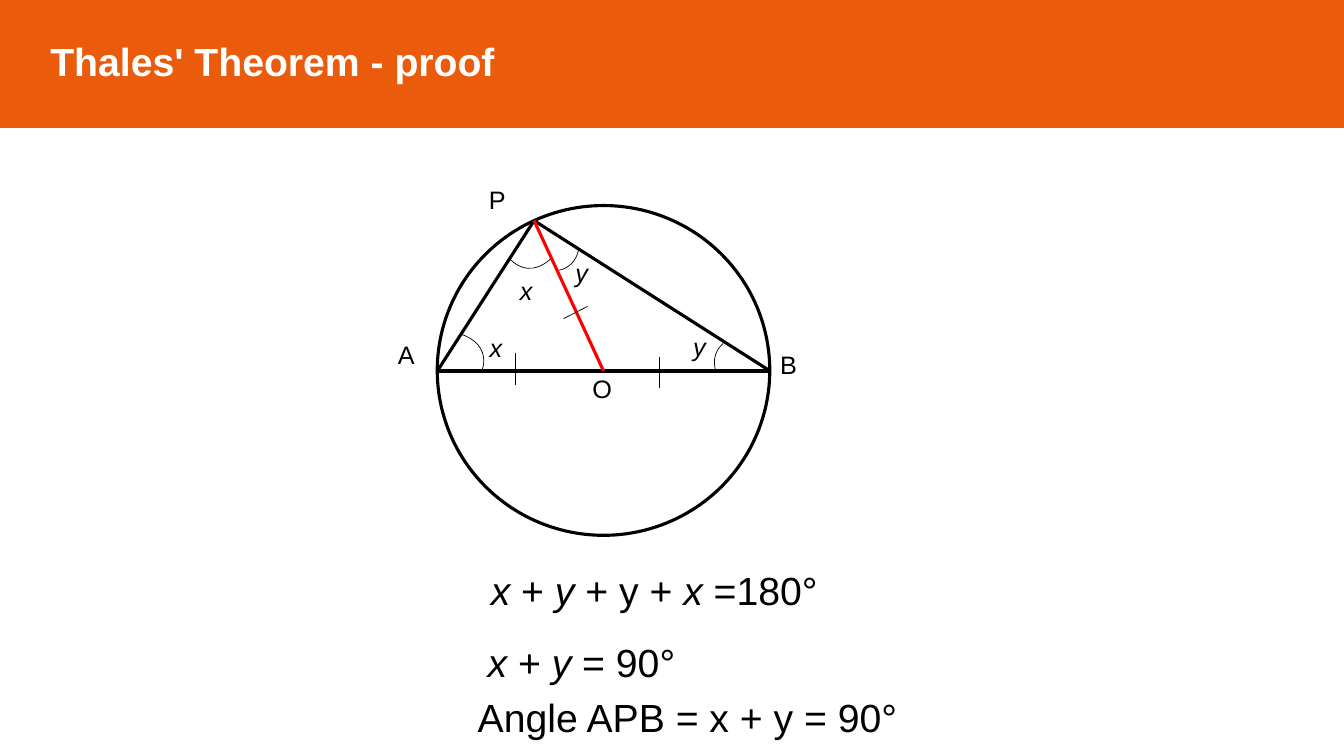
import pptx
import pptx.dml.color
import pptx.enum.shapes
import pptx.enum.text
import pptx.oxml.ns
import pptx.util
from lxml import etree

Cm = pptx.util.Cm
Pt = pptx.util.Pt
RGBColor = pptx.dml.color.RGBColor
Shape = pptx.enum.shapes.MSO_SHAPE

ORANGE = RGBColor(0xEA, 0x5B, 0x0C)
WHITE = RGBColor(0xFF, 0xFF, 0xFF)
BLACK = RGBColor(0, 0, 0)
RED = RGBColor(0xFF, 0, 0)

THICK, THIN = 2.25, 0.5


class ProofSlide:
    """Holds the style and the current slide."""

    font_name = "Arial"

    def __init__(self, presentation):
        self.slide = presentation.slides.add_slide(presentation.slide_layouts[6])
        self.shapes = self.slide.shapes

    def add_runs(self, paragraph, runs, size, color=BLACK, bold=False):
        for text, italic in runs:
            run = paragraph.add_run()
            run.text = text
            run.font.color.rgb = color
            formats = {"name": self.font_name, "size": Pt(size),
                       "bold": bold, "italic": italic}
            for name, value in formats.items():
                setattr(run.font, name, value)

    def text(self, left, top, width, height, runs, size):
        box = self.shapes.add_textbox(Cm(left), Cm(top), Cm(width), Cm(height))
        box.text_frame.word_wrap = True
        self.add_runs(box.text_frame.paragraphs[0], runs, size)

    def shape(self, kind, left, top, width, height, fill=None, line=BLACK, weight=THICK):
        shape = self.shapes.add_shape(kind, Cm(left), Cm(top), Cm(width), Cm(height))
        shape.shadow.inherit = False
        if fill is None:
            shape.fill.background()
        else:
            shape.fill.solid()
            shape.fill.fore_color.rgb = fill
        shape.line.color.rgb = line
        shape.line.width = Pt(weight)
        return shape

    def header(self, title):
        band = self.shape(Shape.RECTANGLE, 0, -0.15, 33.87, 3.35, ORANGE, ORANGE, 1)
        band.text_frame.vertical_anchor = pptx.enum.text.MSO_ANCHOR.MIDDLE
        paragraph = band.text_frame.paragraphs[0]
        paragraph.alignment = pptx.enum.text.PP_ALIGN.LEFT
        properties = paragraph._p.get_or_add_pPr()
        properties.set("marL", str(Cm(1.02)))
        self.add_runs(paragraph, [(title, False)], 28, WHITE, bold=True)

    def line(self, start, end, color=BLACK, weight=THICK):
        connector = self.shapes.add_connector(
            pptx.enum.shapes.MSO_CONNECTOR.STRAIGHT,
            *(Cm(value) for value in start + end))
        connector.line.color.rgb = color
        connector.line.width = Pt(weight)
        etree.SubElement(connector._element.spPr, pptx.oxml.ns.qn("a:effectLst"))

    def angle_arc(self, left, top, rotation, start, end):
        arc = self.shape(Shape.ARC, left, top, 4.04, 2.18, weight=THIN)
        arc.rotation = rotation
        # Adjustments count 100000ths, arc angles 60000ths of a degree
        for index, degrees in enumerate((start, end)):
            arc.adjustments[index] = degrees * 0.6


def main():
    presentation = pptx.Presentation()
    presentation.slide_width = Cm(33.87)
    presentation.slide_height = Cm(19.05)
    proof = ProofSlide(presentation)

    proof.header("Thales' Theorem - proof")

    # Circle, triangle and radius
    a, b, p, o = (11.02, 9.35), (19.41, 9.35), (13.46, 5.56), (15.21, 9.35)
    proof.shape(Shape.OVAL, 11.02, 5.18, 8.38, 8.31, WHITE)
    for start, end in ((a, p), (p, b), (a, b)):
        proof.line(start, end)
    proof.line(p, o, RED)

    # Equal-length ticks
    for start, end in (((14.81, 7.72), (14.2, 8.03)),
                       ((16.61, 8.99), (16.61, 9.78)),
                       ((13, 8.89), (13, 9.7))):
        proof.line(start, end, weight=THIN)

    # Angle arcs: y at P and B, x at P and A
    for arc in ((10.97, 4.11, 45.9, 347.83, 9.71),
                (17.93, 8.48, 198.3, 347.83, 9.71),
                (11.48, 3.66, 96.3, 342.14, 13.11),
                (8.23, 8.46, 340.9, 339.67, 13.11)):
        proof.angle_arc(*arc)

    # Point and angle labels
    for label, left, top in (("A", 9.78, 8.43), ("P", 12.07, 4.52),
                             ("B", 19.41, 8.69), ("O", 14.68, 9.27),
                             ("y", 14.25, 6.35), ("y", 17.22, 8.23),
                             ("x", 12.85, 6.81), ("x", 12.09, 8.26)):
        proof.text(left, top, 1.6, 1.02, [(label, label.islower())], 18)

    # Equations, as (text, italic) runs
    equations = (
        (12.12, 14.15, 10.8, [("x", True), (" + ", False), ("y ", True),
                              ("+ y + ", False), ("x ", True), ("=180°", False)]),
        (12.04, 15.95, 8.13, [("x", True), (" + ", False), ("y", True),
                              (" = 90°", False)]),
        (11.79, 17.35, 11.81, [("Angle APB = x + y = 90°", False)]),
    )
    for left, top, width, runs in equations:
        proof.text(left, top, width, 1.45, runs, 28)

    presentation.save("out.pptx")


if __name__ == "__main__":
    main()
